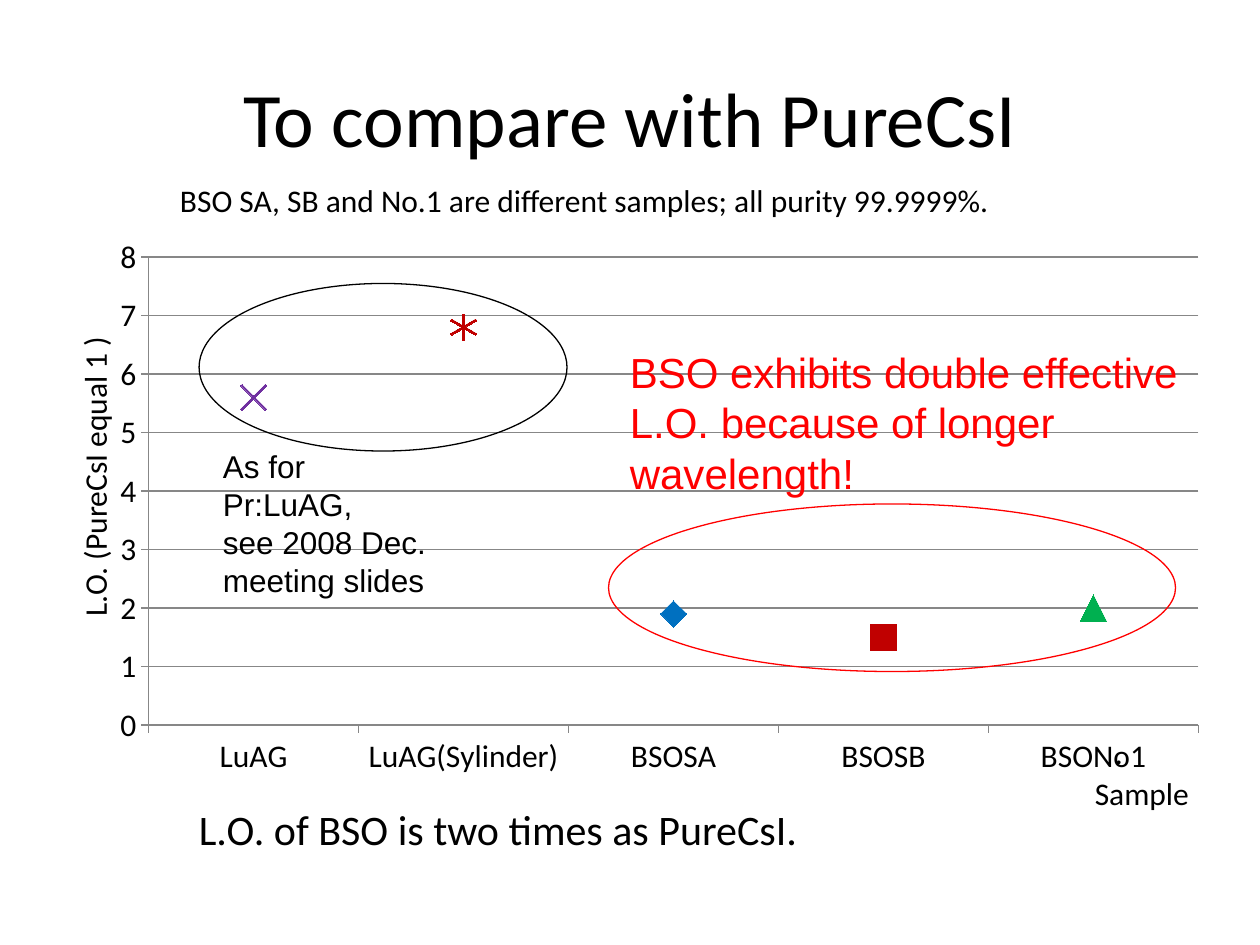
"""Build a slide that compares light output of samples with PureCsI."""
from dataclasses import dataclass

from lxml import etree
from pptx import Presentation
from pptx import util as u
from pptx.chart import data
from pptx.dml import color
from pptx.enum import chart as ch
from pptx.enum import shapes, text

HUES = {"black": "000000", "red": "FF0000", "grid": "878787", "violet": "7030A0",
        "brick": "C00000", "blue": "0070C0", "green": "00B050"}
MARK = ch.XL_MARKER_STYLE


@dataclass
class Box:
    """Place in inches."""
    left: float
    top: float
    width: float
    height: float

    def args(self) -> tuple:
        """Return the place as lengths."""
        return tuple(u.Inches(n) for n in (self.left, self.top, self.width, self.height))


@dataclass
class Note:
    """Text with its place and look."""
    box: Box
    lines: tuple
    size: int = 18
    font: str = "Calibri"
    hue: str = "black"
    turn: int = 0
    title: bool = False


@dataclass
class Ring:
    """Ellipse around a group of samples."""
    box: Box
    hue: str


@dataclass
class Sample:
    """Measured sample and its marker."""
    name: str
    value: float
    mark: MARK
    hue: str


NOTES = (
    Note(Box(0.5, 0.3, 9, 1.25), ("To compare with PureCsI",), 44, title=True),
    Note(Box(1.48, 6.33, 7.42, 0.5), ("L.O. of BSO is two times as PureCsI.",), 24),
    Note(Box(8.59, 6.09, 1.02, 0.4), ("Sample",)),
    Note(Box(-0.5, 3.54, 2.5, 0.4), ("L.O. (PureCsI equal 1 )",), turn=270),
    Note(Box(1.33, 1.39, 7.58, 0.4),
         ("BSO SA, SB and No.1 are different samples; all purity 99.9999%.",)),
    Note(Box(8.75, 5.77, 0.55, 0.4), (".",)),
    Note(Box(1.67, 3.5, 1.85, 1.3),
         ("As for Pr:LuAG,", "see 2008 Dec. meeting slides"), font="Arial"),
    Note(Box(4.9, 2.7, 4.68, 1.3),
         ("BSO exhibits double effective L.O. because of longer wavelength!",),
         24, "Arial", "red"),
)
RINGS = (Ring(Box(1.58, 2.25, 2.92, 1.33), "black"),
         Ring(Box(4.83, 4, 4.5, 1.33), "red"))
SAMPLES = (
    Sample("LuAG", 5.6, MARK.X, "violet"),
    Sample("LuAG(Sylinder)", 6.8, MARK.STAR, "brick"),
    Sample("BSOSA", 1.9, MARK.DIAMOND, "blue"),
    Sample("BSOSB", 1.5, MARK.SQUARE, "brick"),
    Sample("BSONo1", 2, MARK.TRIANGLE, "green"),
)
FRAME = Box(0.78, 1.8, 8.91, 4.45)
PLOT = {"x": 0.045, "y": 0.054, "w": 0.935, "h": 0.835}


def rgb(hue: str) -> color.RGBColor:
    """Look up a colour."""
    return color.RGBColor.from_string(HUES[hue])


def write(slide, note: Note) -> None:
    """Add a text box."""
    box = slide.shapes.add_textbox(*note.box.args())
    box.rotation = note.turn
    frame = box.text_frame
    frame.word_wrap = True
    frame.text = "\n".join(note.lines)
    if note.title:
        frame.vertical_anchor = text.MSO_ANCHOR.MIDDLE
    for para in frame.paragraphs:
        para.alignment = text.PP_ALIGN.CENTER if note.title else text.PP_ALIGN.LEFT
        para.font.size = u.Pt(note.size)
        para.font.name = note.font
        para.font.color.rgb = rgb(note.hue)


def circle(slide, ring: Ring) -> None:
    """Add an unfilled ellipse."""
    oval = slide.shapes.add_shape(shapes.MSO_SHAPE.OVAL, *ring.box.args())
    oval.shadow.inherit = False
    oval.fill.background()
    oval.line.color.rgb = rgb(ring.hue)
    oval.line.width = u.Pt(0.75)


def fix(chart) -> None:
    """Pin the inner plot area."""
    area = chart.plots[0]._element.getparent()
    space = area.nsmap["c"]
    for old in area.findall(f"{{{space}}}layout"):
        area.remove(old)
    layout = etree.Element(f"{{{space}}}layout")
    area.insert(0, layout)
    manual = etree.SubElement(layout, f"{{{space}}}manualLayout")
    rules = {"layoutTarget": "inner", "xMode": "edge", "yMode": "edge", **PLOT}
    for tag, val in rules.items():
        etree.SubElement(manual, f"{{{space}}}{tag}", val=str(val))


def graph(slide) -> None:
    """Add the marker chart of light output."""
    table = data.CategoryChartData()
    table.categories = [s.name for s in SAMPLES]
    table.add_series("Series 1", [s.value for s in SAMPLES])
    kind = ch.XL_CHART_TYPE.LINE_MARKERS_STACKED
    chart = slide.shapes.add_chart(kind, *FRAME.args(), table).chart
    chart.has_legend = chart.has_title = False
    chart.font.name = "Calibri"
    chart.font.size = u.Pt(10)
    chart.font.color.rgb = rgb("black")
    chart.plots[0].vary_by_categories = False
    series = chart.plots[0].series[0]
    series.smooth = False
    series.format.line.fill.background()
    for i, sample in enumerate(SAMPLES):
        mark = series.points[i].marker
        mark.style = sample.mark
        mark.size = 15
        mark.format.fill.solid()
        mark.format.fill.fore_color.rgb = rgb(sample.hue)
        mark.format.line.color.rgb = rgb(sample.hue)
    axis = chart.value_axis
    axis.minimum_scale, axis.maximum_scale, axis.major_unit = 0, 8, 1
    axis.has_major_gridlines = True
    chart.category_axis.has_major_gridlines = False
    for side in (axis, chart.category_axis):
        side.tick_labels.font.size = u.Pt(18)
        side.major_tick_mark = ch.XL_TICK_MARK.OUTSIDE
    for part in (axis, chart.category_axis, axis.major_gridlines):
        part.format.line.color.rgb = rgb("grid")
        part.format.line.width = u.Pt(0.75)
    fix(chart)


def main() -> None:
    """Draw and save the slide."""
    deck = Presentation()
    deck.slide_width, deck.slide_height = u.Inches(10), u.Inches(7.5)
    slide = deck.slides.add_slide(deck.slide_layouts[6])
    graph(slide)
    for ring in RINGS:
        circle(slide, ring)
    for note in NOTES:
        write(slide, note)
    deck.save("out.pptx")


if __name__ == "__main__":
    main()
